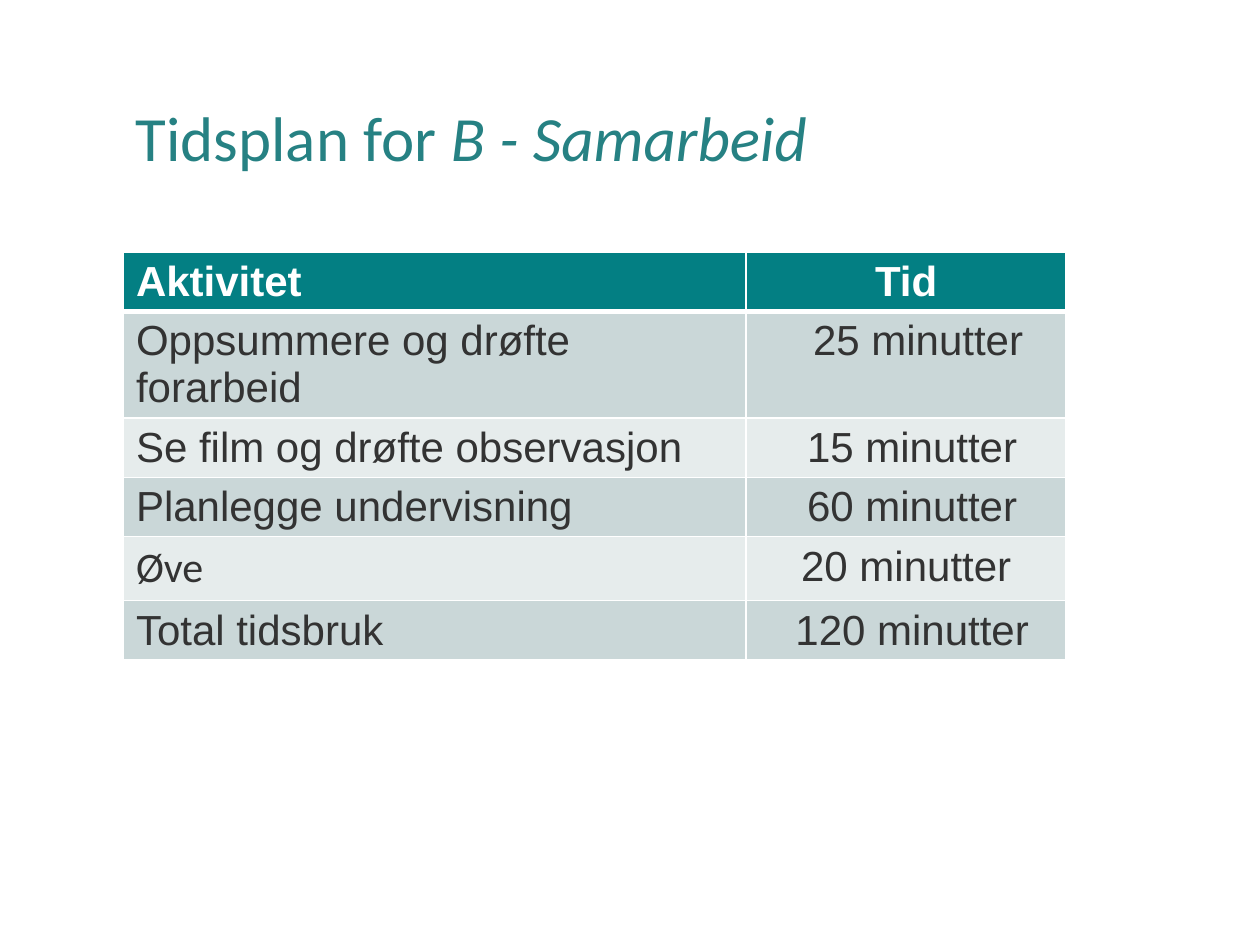
from lxml.etree import SubElement
from pptx import Presentation
from pptx.dml.color import RGBColor
from pptx.enum.text import MSO_ANCHOR, PP_ALIGN
from pptx.oxml.ns import qn
from pptx.util import Pt

TITLE_COLOR = RGBColor(0x26, 0x81, 0x83)
HEADER_FILL = RGBColor(0x03, 0x7F, 0x83)
BAND_FILLS = (RGBColor(0xCA, 0xD7, 0xD8), RGBColor(0xE6, 0xEC, 0xEC))
TEXT_COLOR = RGBColor(0x33, 0x33, 0x33)
WHITE = RGBColor(0xFF, 0xFF, 0xFF)

TITLE_RUNS = [("Tidsplan for ", False), ("B - Samarbeid", True)]

# activity, its font, time, indent of the time in px, row height in px
SCHEDULE = [
    ("Aktivitet", "Arial", "Tid", 0, 59),
    ("Oppsummere og drøfte forarbeid", "Arial", "25 minutter", 24, 106),
    ("Se film og drøfte observasjon", "Arial", "15 minutter", 12, 59),
    ("Planlegge undervisning", "Arial", "60 minutter", 12, 59),
    ("Øve", "Calibri", "20 minutter", 0, 64),
    ("Total tidsbruk", "Arial", "120 minutter", 12, 59),
]
COLUMN_WIDTHS = (623, 320)
LEFT, TABLE_TOP = 123, 252
PADDING = 13


def px(count):
    return round(count * 914400 / 126)


def add_run(paragraph, text, font_name, size, color, bold=False, italic=False):
    run = paragraph.add_run()
    run.text = text
    font = run.font
    font.name, font.size, font.bold, font.italic = font_name, Pt(size), bold, italic
    font.color.rgb = color


def set_borders(cell, top, bottom):
    """Draw white cell borders; top and bottom are widths in points."""
    properties = cell._tc.get_or_add_tcPr()
    for side, width in (("L", 1), ("R", 1), ("T", top), ("B", bottom)):
        line = SubElement(properties, qn(f"a:ln{side}"), w=str(Pt(width)))
        fill = SubElement(line, qn("a:solidFill"))
        SubElement(fill, qn("a:srgbClr"), val=str(WHITE))


def add_title(slide):
    title = slide.shapes.title
    title.left, title.top, title.width, title.height = map(px, (LEFT, 50, 1045, 183))
    title.text_frame.vertical_anchor = MSO_ANCHOR.MIDDLE
    paragraph = title.text_frame.paragraphs[0]
    paragraph.alignment = PP_ALIGN.LEFT
    paragraph.line_spacing = 0.9
    for text, italic in TITLE_RUNS:
        add_run(paragraph, text, "Calibri", 36, TITLE_COLOR, italic=italic)


def add_schedule(slide):
    height = sum(row[-1] for row in SCHEDULE)
    table = slide.shapes.add_table(
        len(SCHEDULE), len(COLUMN_WIDTHS),
        px(LEFT), px(TABLE_TOP), px(sum(COLUMN_WIDTHS)), px(height)).table
    for column, width in zip(table.columns, COLUMN_WIDTHS):
        column.width = px(width)

    for index, (activity, activity_font, time, indent, row_height) in enumerate(SCHEDULE):
        header = index == 0
        table.rows[index].height = px(row_height)
        columns = ((activity, activity_font, PP_ALIGN.LEFT, 0),
                   (time, "Arial", PP_ALIGN.CENTER, indent))
        for cell, (text, font_name, alignment, shift) in zip(table.rows[index].cells, columns):
            set_borders(cell, top=3 if index == 1 else 1, bottom=3 if header else 1)
            cell.fill.solid()
            cell.fill.fore_color.rgb = HEADER_FILL if header else BAND_FILLS[(index - 1) % 2]
            cell.margin_left = px(PADDING + shift)
            paragraph = cell.text_frame.paragraphs[0]
            paragraph.alignment = alignment
            add_run(paragraph, text, font_name, 24, WHITE if header else TEXT_COLOR, bold=header)


def main():
    presentation = Presentation()
    presentation.slide_width, presentation.slide_height = px(1260), px(945)
    slide = presentation.slides.add_slide(presentation.slide_layouts[5])
    add_title(slide)
    add_schedule(slide)
    presentation.save("out.pptx")


if __name__ == "__main__":
    main()
